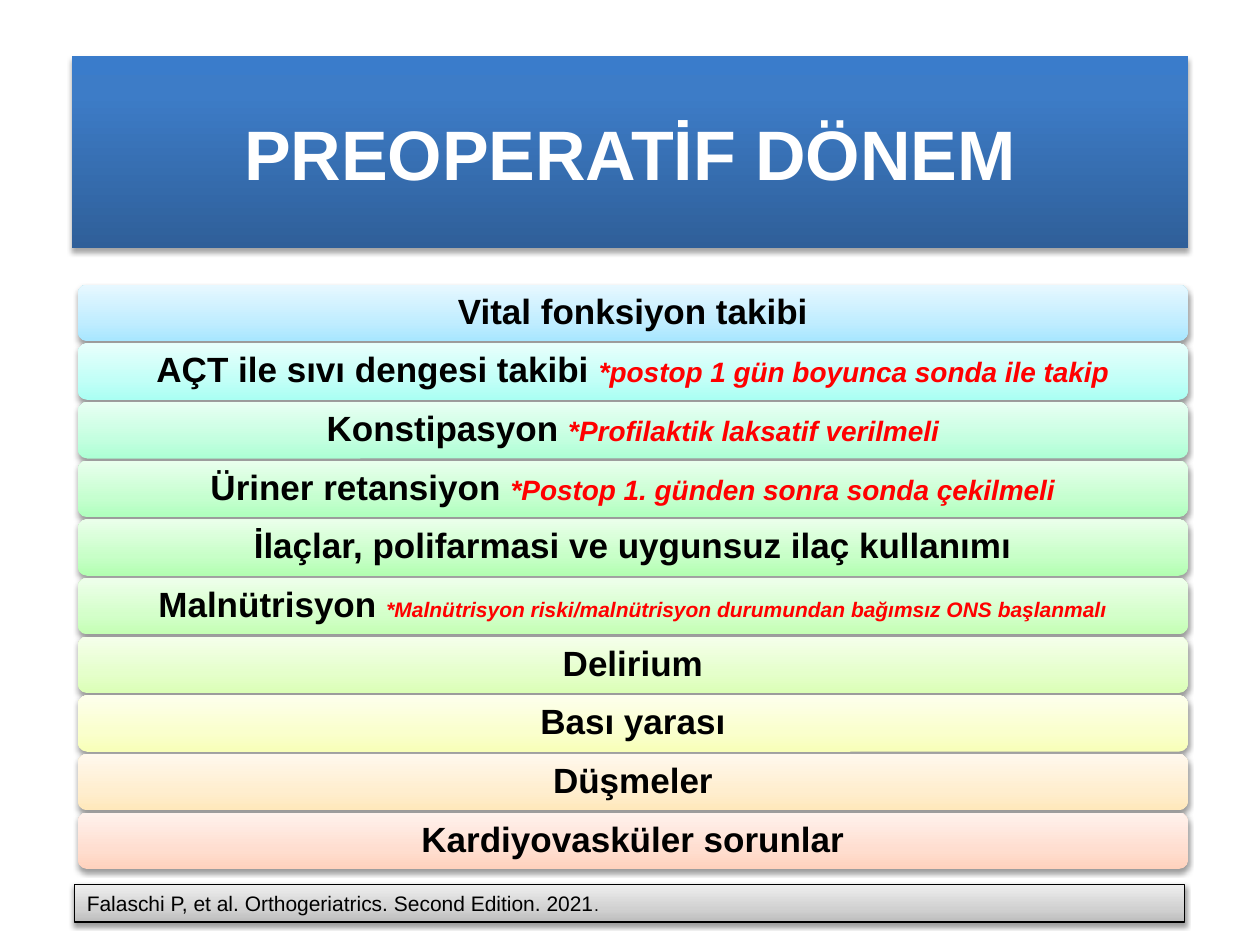
from lxml.etree import SubElement
from pptx import Presentation
from pptx.dml.color import RGBColor
from pptx.enum.shapes import MSO_SHAPE as Preset
from pptx.enum.text import MSO_ANCHOR as Anchor, MSO_AUTO_SIZE as AutoSize, PP_ALIGN as Align
from pptx.oxml.ns import qn
from pptx.util import Cm, Pt

# Content: label, red note, note size, gradient from bottom to top
TITLE = "PREOPERATİF DÖNEM"
ROWS = [
    ("Vital fonksiyon takibi", "", 16, ("A7E6FF", "C1EDFF", "E7F8FF")),
    ("AÇT ile sıvı dengesi takibi", "*postop 1 gün boyunca sonda ile takip", 16,
     ("AAFFF3", "C2FFF7", "E8FFFC")),
    ("Konstipasyon", "*Profilaktik laksatif verilmeli", 16, ("ACFFD4", "C4FFE0", "E9FFF3")),
    ("Üriner retansiyon", "*Postop 1. günden sonra sonda çekilmeli", 16,
     ("AFFFBD", "C6FFD0", "E9FFED")),
    ("İlaçlar, polifarmasi ve uygunsuz ilaç kullanımı", "", 16, ("B2FFB1", "C8FFC8", "EAFFEA")),
    ("Malnütrisyon", "*Malnütrisyon riski/malnütrisyon durumundan bağımsız ONS başlanmalı", 12,
     ("C3FFB3", "D4FFCA", "EEFFEB")),
    ("Delirium", "", 16, ("DBFFB6", "E5FFCB", "F5FFEB")),
    ("Bası yarası", "", 16, ("F8FFB8", "FAFFCD", "FDFFEC")),
    ("Düşmeler", "", 16, ("FFE8BB", "FFEECF", "FFF8ED")),
    ("Kardiyovasküler sorunlar", "", 16, ("FFD2BD", "FFDED0", "FFF2ED")),
]
SOURCE = "Falaschi P, et al. Orthogeriatrics. Second Edition. 2021"
TITLE_COLORS = ("2F5F99", "3D7CC7", "3A7CCB")
SOURCE_COLORS = ("BDBDBD", "D1D1D1", "EEEEEE")

# Layout in cm
ROW_LEFT, ROW_WIDTH, ROW_HEIGHT = 1.57, 22.38, 1.14
FIRST_TOP, LAST_TOP = 5.74, 16.38
ROW_STEP = (LAST_TOP - FIRST_TOP) / (len(ROWS) - 1)


def color(value):
    return RGBColor.from_string(value)


def add_gradient(shape, colors, middle=35):
    shape.fill.gradient()
    shape.fill.gradient_angle = 90
    stops = shape._element.spPr.find(qn("a:gradFill")).find(qn("a:gsLst"))
    for stop in list(stops):
        stops.remove(stop)
    for position, value in zip((0, middle, 100), colors):
        stop = SubElement(stops, qn("a:gs"), pos=str(position * 1000))
        SubElement(stop, qn("a:srgbClr"), val=value)


def add_shadow(shape, opacity=38, distance=1.6):
    shape.shadow.inherit = False
    effects = shape._element.spPr.find(qn("a:effectLst"))
    shadow = SubElement(effects, qn("a:outerShdw"), blurRad=str(Pt(3.1)),
                        dist=str(Pt(distance)), dir="5400000", rotWithShape="0")
    black = SubElement(shadow, qn("a:srgbClr"), val="000000")
    SubElement(black, qn("a:alpha"), val=str(opacity * 1000))


def set_font(font, size, value, bold=None):
    font.name, font.size, font.bold = "Arial", Pt(size), bold
    font.color.rgb = color(value)


def add_box(slide, preset, left, top, width, height, colors):
    shape = slide.shapes.add_shape(preset, Cm(left), Cm(top), Cm(width), Cm(height))
    add_gradient(shape, colors)
    add_shadow(shape)
    shape.line.fill.background()
    shape.text_frame.vertical_anchor = Anchor.MIDDLE
    return shape


def add_title(slide):
    title = slide.shapes.title
    title.left, title.top, title.width, title.height = Cm(1.45), Cm(1.12), Cm(22.5), Cm(3.89)
    add_gradient(title, TITLE_COLORS, 80)
    add_shadow(title, 35, 1.8)
    frame = title.text_frame
    frame.text = TITLE
    frame.auto_size = AutoSize.NONE
    frame.vertical_anchor = Anchor.MIDDLE
    frame.paragraphs[0].alignment = Align.CENTER
    set_font(frame.paragraphs[0].font, 40, "FFFFFF", True)


def add_row(slide, index, label, note, note_size, colors):
    row = add_box(slide, Preset.ROUNDED_RECTANGLE, ROW_LEFT, FIRST_TOP + index * ROW_STEP,
                  ROW_WIDTH, ROW_HEIGHT, colors)
    paragraph = row.text_frame.paragraphs[0]
    paragraph.alignment = Align.CENTER
    paragraph.line_spacing = 0.9
    run = paragraph.add_run()
    run.text = f"{label} " if note else label
    set_font(run.font, 20, "000000", True)
    if note:
        run = paragraph.add_run()
        run.text = note
        set_font(run.font, note_size, "FF0000", True)
        run.font.italic = True


def add_source(slide):
    box = add_box(slide, Preset.RECTANGLE, 1.5, 17.83, ROW_WIDTH, 0.76, SOURCE_COLORS)
    box.line.color.rgb = color("000000")
    box.line.width = Pt(0.75)
    paragraph = box.text_frame.paragraphs[0]
    paragraph.alignment = Align.LEFT
    for text, size in ((SOURCE, 12), (".", 10)):
        run = paragraph.add_run()
        run.text = text
        set_font(run.font, size, "000000")


def main():
    presentation = Presentation()
    presentation.slide_width, presentation.slide_height = Cm(25.4), Cm(19.05)
    slide = presentation.slides.add_slide(presentation.slide_layouts[5])
    add_title(slide)
    for index, row in enumerate(ROWS):
        add_row(slide, index, *row)
    add_source(slide)
    presentation.save("out.pptx")


if __name__ == "__main__":
    main()
